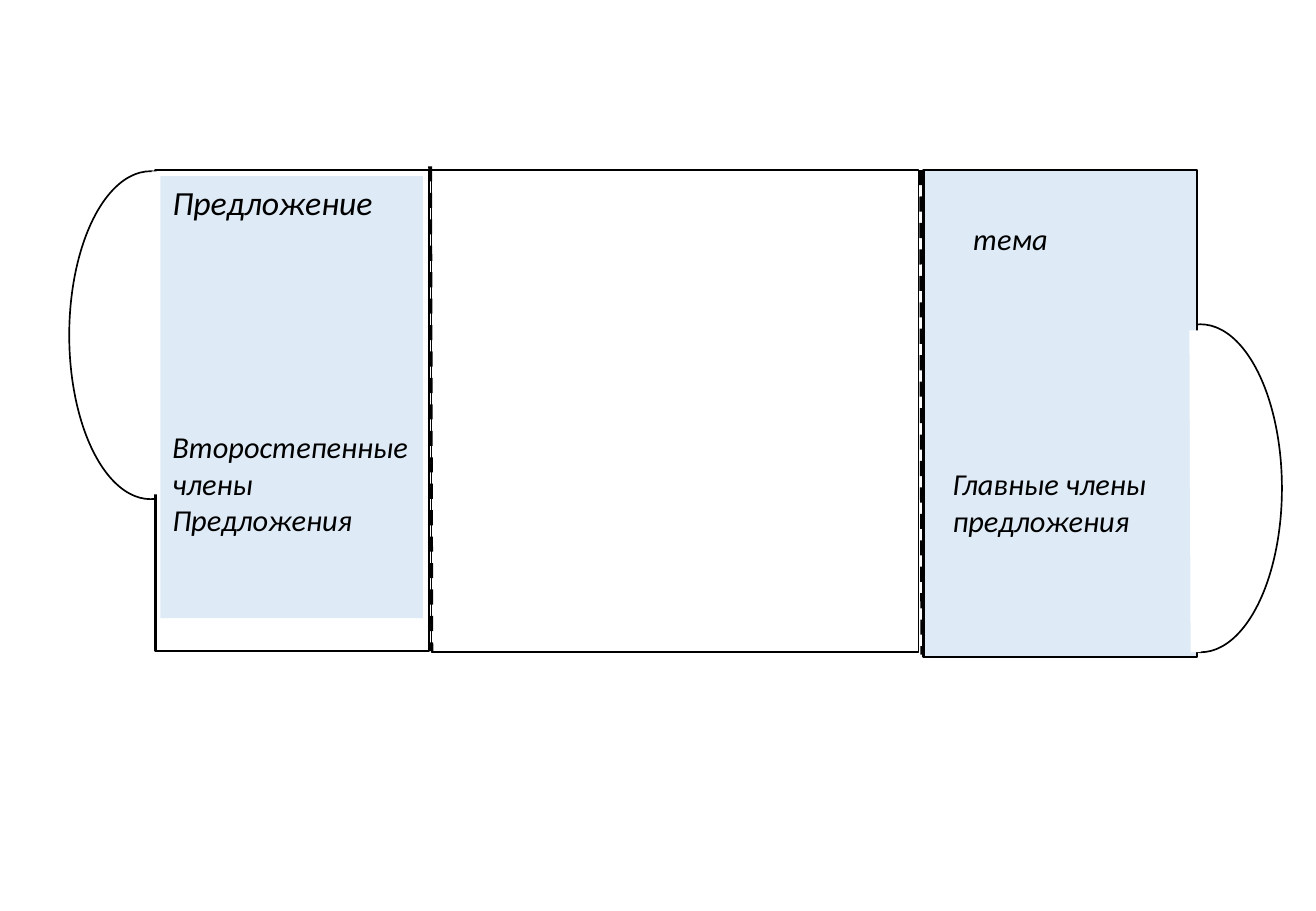
"""Build a fold-out study card about the parts of a sentence."""
from lxml import etree
from pptx import Presentation
from pptx.dml.color import RGBColor
from pptx.enum.dml import MSO_LINE
from pptx.enum.shapes import MSO_CONNECTOR, MSO_SHAPE
from pptx.enum.text import MSO_ANCHOR, PP_ALIGN
from pptx.oxml.ns import qn
from pptx.util import Inches, Pt

RECT, OVAL = MSO_SHAPE.RECTANGLE, MSO_SHAPE.OVAL
STRAIGHT = MSO_CONNECTOR.STRAIGHT
DASH = MSO_LINE.DASH
TOP, BOTTOM = MSO_ANCHOR.TOP, MSO_ANCHOR.BOTTOM
LEFT = PP_ALIGN.LEFT
BLACK, WHITE, PALE_BLUE = "000000", "FFFFFF", "DEEBF7"


def color(value):
    return RGBColor.from_string(value)


prs = Presentation()
prs.slide_width, prs.slide_height = Inches(10.83), Inches(7.5)
s = prs.slides.add_slide(prs.slide_layouts[6])

center = (RECT, 3.55, 1.4, 4.01, 3.97, None, 1)
left_tab = (OVAL, 0.57, 1.41, 1.34, 2.7, WHITE, 1)
left_flap = (RECT, 1.28, 1.4, 2.25, 3.96, WHITE, 1.5)
left_gap = (1.3, 4.07, 1.29, 1.41, WHITE, 6, None)
right_tab = (OVAL, 9.21, 2.67, 1.34, 2.7, WHITE, 1)
right_flap = (RECT, 7.6, 1.4, 2.25, 4.01, PALE_BLUE, 1.5)
right_gap = (9.83, 2.72, 9.84, 5.37, WHITE, 6, None)
left_fold = (3.54, 1.37, 3.55, 5.36, BLACK, 2.25, DASH)
right_fold = (7.58, 1.4, 7.59, 5.39, BLACK, 2.25, DASH)

layers = [
    ([center, left_tab, left_flap], [left_gap]),
    ([right_tab, right_flap], [right_gap, left_fold, right_fold]),
]
for outlines, lines in layers:
    for kind, x, y, w, h, fill, width in outlines:
        sp = s.shapes.add_shape(kind, Inches(x), Inches(y), Inches(w), Inches(h))
        sp.shadow.inherit = False
        if fill:
            sp.fill.solid()
            sp.fill.fore_color.rgb = color(fill)
        else:
            sp.fill.background()
        sp.line.color.rgb = color(BLACK)
        sp.line.width = Pt(width)
    for x1, y1, x2, y2, stroke, width, dash in lines:
        line = s.shapes.add_connector(STRAIGHT, Inches(x1), Inches(y1), Inches(x2), Inches(y2))
        line.line.color.rgb = color(stroke)
        line.line.width = Pt(width)
        if dash:
            line.line.dash_style = dash
        etree.SubElement(line._element.spPr, qn("a:effectLst"))

left_panel = s.shapes.add_shape(RECT, Inches(1.32), Inches(1.45), Inches(2.16), Inches(3.64))
left_panel.shadow.inherit = False
left_panel.fill.solid()
left_panel.fill.fore_color.rgb = color(PALE_BLUE)
left_panel.line.fill.background()
main_parts = s.shapes.add_textbox(Inches(7.74), Inches(1.79), Inches(1.91), Inches(2.69))
topic = s.shapes.add_textbox(Inches(7.91), Inches(1.76), Inches(1.38), Inches(0.4))

labels = [
    (left_panel, TOP, [("Предложение", 20, 0), ("Второстепенные члены", 18, 122), ("Предложения", 18, 0)]),
    (main_parts, BOTTOM, [("Главные члены предложения", 18, 0)]),
    (topic, TOP, [("тема", 18, 0)]),
]
for sp, anchor, paragraphs in labels:
    tf = sp.text_frame
    tf.word_wrap = True
    tf.vertical_anchor = anchor
    tf.text = "\n".join(text for text, size, gap in paragraphs)
    for p, (text, size, gap) in zip(tf.paragraphs, paragraphs):
        p.alignment = LEFT
        p.space_before = Pt(gap)
        r = p.runs[0]
        r.font.name = "Calibri"
        r.font.size = Pt(size)
        r.font.italic = True
        r.font.color.rgb = color(BLACK)

prs.save("out.pptx")
